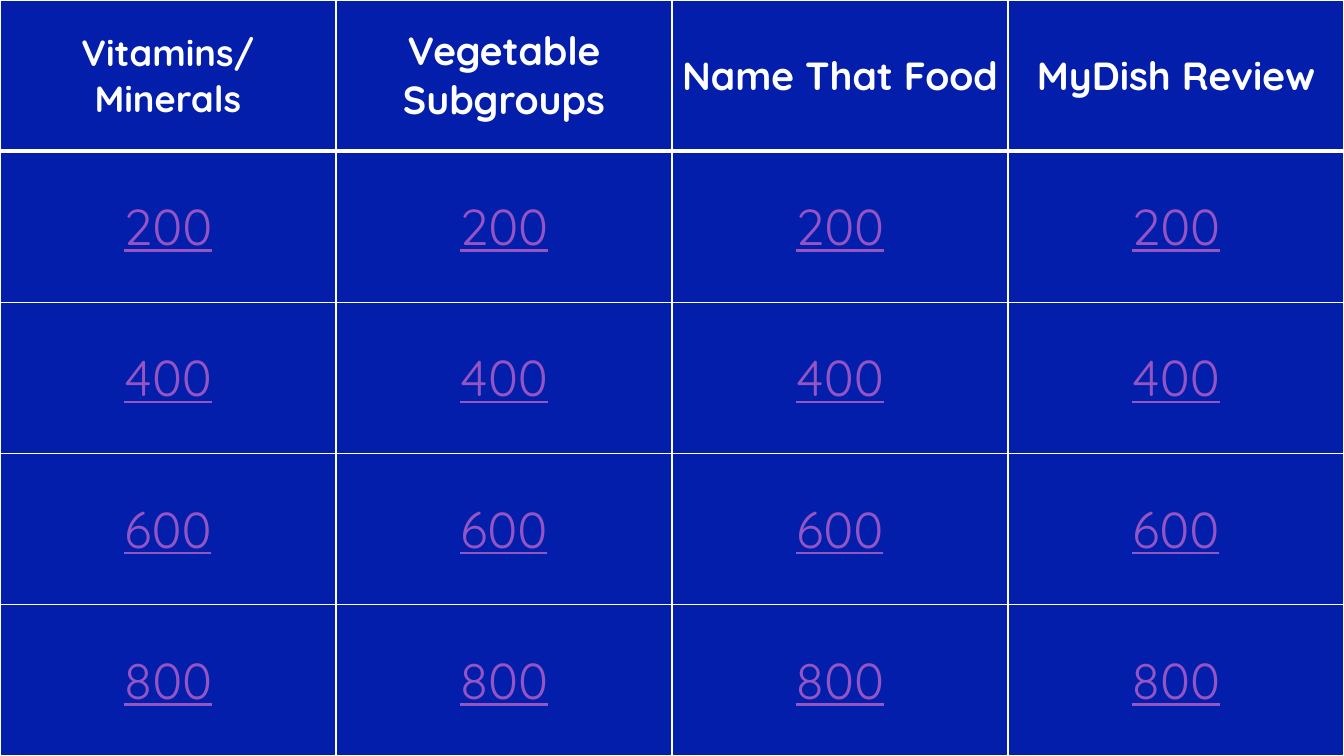
import pptx
import pptx.util
import pptx.dml.color
import pptx.enum.text
import pptx.oxml
import pptx.oxml.ns

COLORS = {"backdrop": "242852", "board": "021EAB", "line": "FFFFFF",
          "header": "FFFFFF", "points": "9454C3"}
WIDTH, HEIGHT = 13.33, 7.5
CATEGORIES = [("Vitamins/Minerals", 26), ("Vegetable Subgroups", 28),
              ("Name That Food", 28), ("MyDish Review", 28)]
POINTS = [200, 400, 600, 800]


def rgb(name):
    return pptx.dml.color.RGBColor.from_string(COLORS[name])


class QuizBoard:
    """Holds the style and the slide that the board is drawn on."""

    font = "Quicksand"
    header_format = {"bold": True, "underline": False}
    points_format = {"bold": False, "underline": True}

    def __init__(self, presentation):
        self.slide = presentation.slides.add_slide(presentation.slide_layouts[6])
        fill = self.slide.background.fill
        fill.solid()
        fill.fore_color.rgb = rgb("backdrop")

    def add_grid(self, rows, columns):
        frame = self.slide.shapes.add_table(
            rows, columns, 0, 0, pptx.util.Inches(WIDTH), pptx.util.Inches(HEIGHT))
        table = frame.table
        table.horz_banding = False
        for column in table.columns:
            column.width = pptx.util.Inches(WIDTH / columns)
        for row in table.rows:
            row.height = pptx.util.Inches(HEIGHT / rows)
        return table

    def fill_cell(self, cell, text, size, color, format_values, borders):
        cell.vertical_anchor = pptx.enum.text.MSO_ANCHOR.MIDDLE
        paragraph = cell.text_frame.paragraphs[0]
        paragraph.alignment = pptx.enum.text.PP_ALIGN.CENTER
        run = paragraph.add_run()
        run.text = text
        values = {"name": self.font, "size": pptx.util.Pt(size), **format_values}
        for name, value in values.items():
            setattr(run.font, name, value)
        run.font.color.rgb = rgb(color)
        self.add_borders(cell, borders)
        cell.fill.solid()
        cell.fill.fore_color.rgb = rgb("board")

    def add_borders(self, cell, borders):
        properties = cell._tc.get_or_add_tcPr()
        for side in ("L", "R", "T", "B"):
            width = pptx.util.Pt(borders.get(side, 1))
            properties.append(pptx.oxml.parse_xml(
                f'<a:ln{side} {pptx.oxml.ns.nsdecls("a")} w="{width}">'
                f'<a:solidFill><a:srgbClr val="{COLORS["line"]}"/></a:solidFill>'
                f'</a:ln{side}>'))


def main():
    presentation = pptx.Presentation()
    presentation.slide_width = pptx.util.Inches(WIDTH)
    presentation.slide_height = pptx.util.Inches(HEIGHT)
    board = QuizBoard(presentation)
    table = board.add_grid(len(POINTS) + 1, len(CATEGORIES))

    for column, (category, size) in enumerate(CATEGORIES):
        # Category header with a heavy rule below
        board.fill_cell(table.cell(0, column), category, size, "header",
                        board.header_format, {"B": 3})
        # Point values down the column
        for row, points in enumerate(POINTS, start=1):
            board.fill_cell(table.cell(row, column), str(points), 36, "points",
                            board.points_format, {"T": 3} if row == 1 else {})

    presentation.save("out.pptx")


if __name__ == "__main__":
    main()
